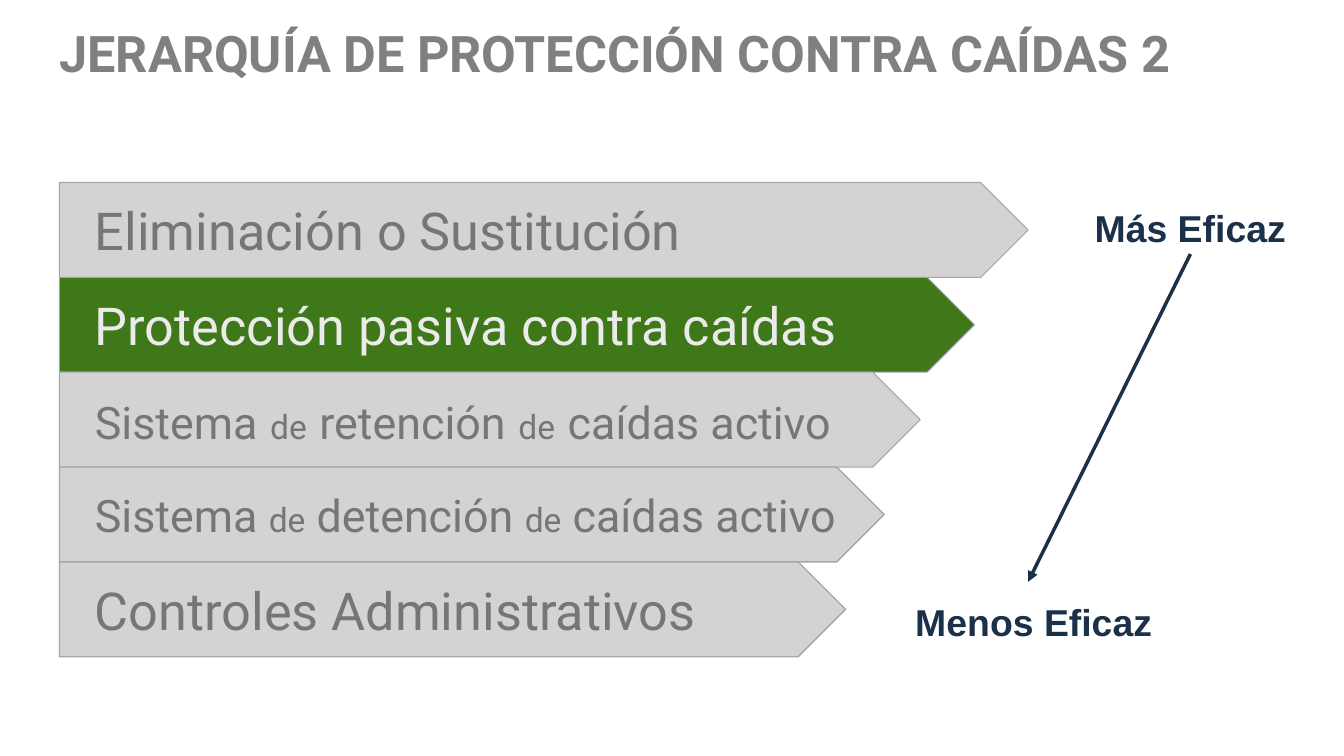
"""Build the fall protection hierarchy slide."""
from lxml import etree
from pptx import Presentation
from pptx.dml.color import RGBColor
from pptx.enum.shapes import MSO_CONNECTOR, MSO_SHAPE
from pptx.enum.text import MSO_ANCHOR, MSO_AUTO_SIZE, PP_ALIGN
from pptx.oxml.ns import qn
from pptx.util import Cm, Pt

ARROW = MSO_SHAPE.PENTAGON
STRAIGHT = MSO_CONNECTOR.STRAIGHT
LEFT, CENTER = PP_ALIGN.LEFT, PP_ALIGN.CENTER
MIDDLE = MSO_ANCHOR.MIDDLE
NO_FIT = MSO_AUTO_SIZE.NONE

COLORS = {
    "title": "808080", "plain": "D3D3D3", "active": "3F7819",
    "border": "A6A6A6", "plain text": "767676", "active text": "EBEBEB",
    "navy": "1B3049",
}
TITLE = "JERARQUÍA DE PROTECCIÓN CONTRA CAÍDAS 2"
LARGE, MEDIUM, SMALL, SPACE = 37.3, 32, 24, 36
LEVELS = [
    (24.41, "plain", 0.75, [("Eliminación o Sustitución", LARGE)]),
    (23.06, "active", 0.75, [("Protección pasiva contra caídas", LARGE)]),
    (21.69, "plain", 0.75, [
        ("Sistema", MEDIUM), (" ", SPACE), ("de", SMALL), (" ", SPACE),
        ("retención", MEDIUM), (" ", SPACE), ("de", SMALL), (" ", SPACE),
        ("caídas activo", MEDIUM)]),
    (20.78, "plain", 1, [
        ("Sistema ", MEDIUM), ("de", SMALL), (" detención ", MEDIUM),
        ("de", SMALL), (" caídas activo", MEDIUM)]),
    (19.81, "plain", 1, [("Controles Administrativos", LARGE)]),
]
MOST, LEAST = "Más Eficaz", "Menos Eficaz"
MOST_AREA = (26.34, 5.05, 7.32, 1.37)
LEAST_AREA = (21.46, 14.98, 9.19, 1.37)
TITLE_AREA = (1.5, 0.7, 31, 1.25)
TREND = (30, 6.4, 25.91, 14.66)
ARROWS_LEFT, ARROWS_TOP, ARROW_HEIGHT = 1.5, 4.6, 2.39
TEXT_INSET = 0.89


def color(name):
    return RGBColor.from_string(COLORS[name])


def apply(target, values):
    for name, value in values.items():
        setattr(target, name, value)


def place(box, area):
    names = ("left", "top", "width", "height")
    apply(box, dict(zip(names, map(Cm, area))))


def write(box, spans, font, tint, align, bold=False, inset=0):
    frame = box.text_frame
    apply(frame, {
        "word_wrap": True, "auto_size": NO_FIT, "vertical_anchor": MIDDLE,
        "margin_left": Cm(inset), "margin_right": 0,
        "margin_top": 0, "margin_bottom": 0,
    })
    para = frame.paragraphs[0]
    apply(para, {"alignment": align, "space_before": Pt(0), "line_spacing": 1.0})
    for text, size in spans:
        span = para.add_run()
        span.text = text
        apply(span.font, {"name": font, "size": Pt(size), "bold": bold})
        span.font.color.rgb = color(tint)
    return para


def add_level(page, index, level):
    width, style, border, spans = level
    top = ARROWS_TOP + index * ARROW_HEIGHT
    box = page.shapes.add_shape(
        ARROW, *map(Cm, (ARROWS_LEFT, top, width, ARROW_HEIGHT)))
    box.shadow.inherit = False
    box.fill.solid()
    box.fill.fore_color.rgb = color(style)
    box.line.color.rgb = color("border")
    box.line.width = Pt(border)
    write(box, spans, "Roboto", style + " text", LEFT, inset=TEXT_INSET)


def add_trend(page):
    trend = page.shapes.add_connector(STRAIGHT, *map(Cm, TREND))
    trend.line.color.rgb = color("navy")
    trend.line.width = Pt(2.5)
    etree.SubElement(trend.line._get_or_add_ln(), qn("a:tailEnd"), type="triangle")
    etree.SubElement(trend._element.spPr, qn("a:effectLst"))


def main():
    deck = Presentation()
    apply(deck, {"slide_width": Cm(33.87), "slide_height": Cm(19.05)})
    page = deck.slides.add_slide(deck.slide_layouts[1])

    title, most = page.placeholders
    place(title, TITLE_AREA)
    write(title, [(TITLE, 36)], "Roboto", "title", LEFT, bold=True)

    for index, level in enumerate(LEVELS):
        add_level(page, index, level)

    least = page.shapes.add_textbox(0, 0, 0, 0)
    for box, text, area in ((most, MOST, MOST_AREA), (least, LEAST, LEAST_AREA)):
        place(box, area)
        para = write(box, [(text, 26.7)], "Arial", "navy", CENTER, bold=True)
        props = para._p.get_or_add_pPr()
        props.set("marL", "0")
        props.set("indent", "0")
        etree.SubElement(props, qn("a:buNone"))
    add_trend(page)
    deck.save("out.pptx")


if __name__ == "__main__":
    main()
